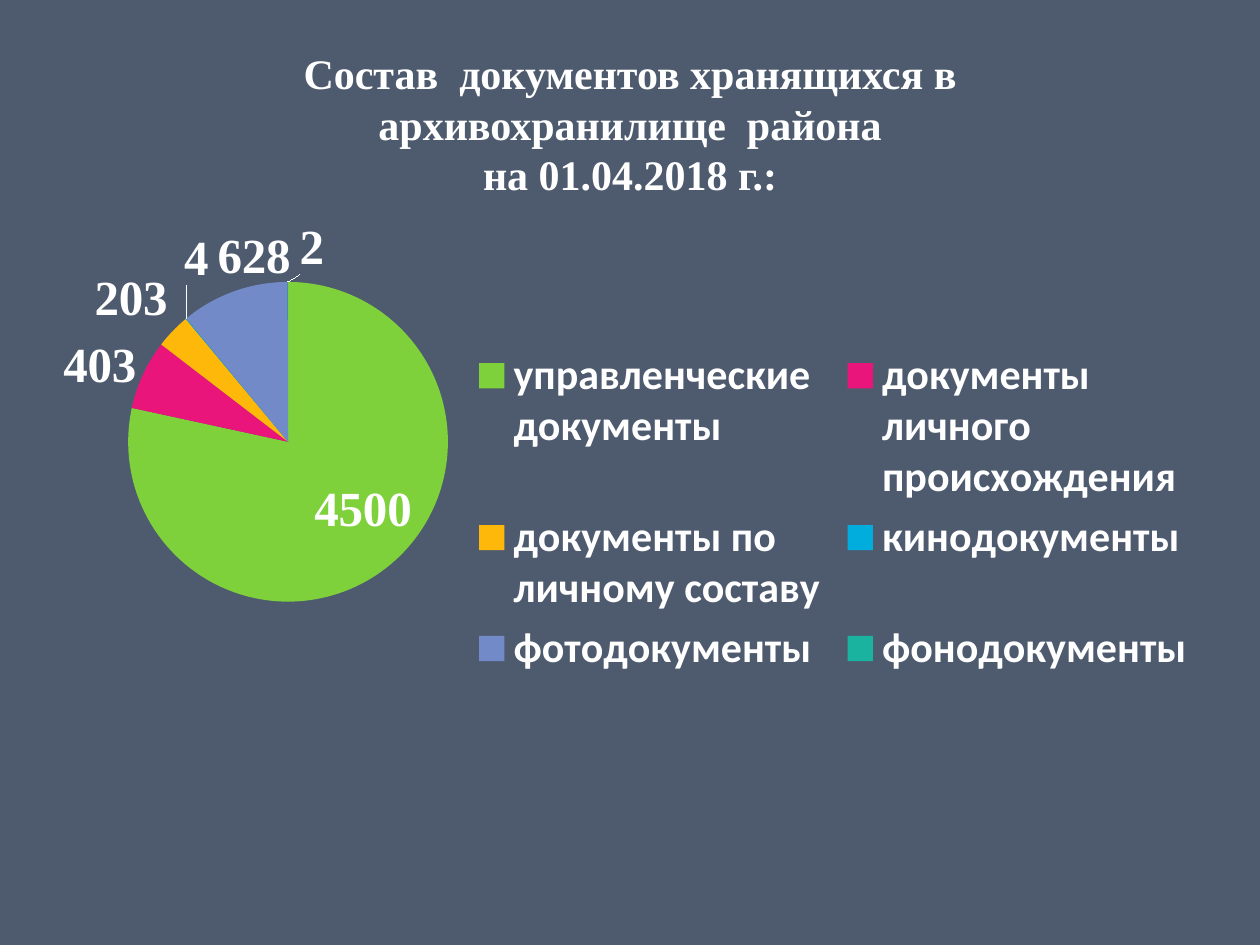
from lxml import etree
from pptx import Presentation
from pptx.chart.data import CategoryChartData
from pptx.dml.color import RGBColor
from pptx.enum.chart import XL_CHART_TYPE as ChartType, XL_LABEL_POSITION as LabelPos
from pptx.enum.chart import XL_LEGEND_POSITION as LegendPos
from pptx.enum.text import MSO_ANCHOR, PP_ALIGN
from pptx.oxml.ns import qn
from pptx.util import Inches, Pt

COLORS = {"background": "4E5B6F", "text": "FFFFFF"}
HOLDINGS = [
    ("управленческие документы", 4500, "7FD13B"),
    ("документы личного происхождения", 403, "EA157A"),
    ("документы по личному составу", 203, "FEB80A"),
    ("кинодокументы", 4, "00ADDC"),
    ("фотодокументы", 628, "738AC8"),
    ("фонодокументы", 2, "1AB39F"),
]
# Shares of the chart's width and height
PIE_AREA = {"x": 0.076, "y": 0.156, "w": 0.273, "h": 0.478}


def set_font(font, size, name="Times New Roman", color=COLORS["text"], bold=True):
    font.size, font.name, font.bold = Pt(size), name, bold
    font.color.rgb = RGBColor.from_string(color)


prs = Presentation()
prs.slide_width, prs.slide_height = Inches(10), Inches(7.5)
slide = prs.slides.add_slide(prs.slide_layouts[6])
slide.background.fill.solid()
slide.background.fill.fore_color.rgb = RGBColor.from_string(COLORS["background"])

# Title
title = slide.shapes.add_textbox(Inches(0.94), 0, Inches(8.12), Inches(1.65)).text_frame
title.word_wrap = True
title.vertical_anchor = MSO_ANCHOR.BOTTOM
title.margin_bottom = Inches(0.07)
title.text = "Состав  документов хранящихся в архивохранилище  района\nна 01.04.2018 г.:"
for line in title.paragraphs:
    line.alignment = PP_ALIGN.CENTER
    set_font(line.runs[0].font, 24)

# Pie of holdings
data = CategoryChartData()
data.categories = [name for name, _, _ in HOLDINGS]
data.add_series("Series 1", [count for _, count, _ in HOLDINGS])
chart = slide.shapes.add_chart(
    ChartType.PIE, Inches(0.31), Inches(1.41), Inches(9.3), Inches(5.31), data
).chart
set_font(chart.font, 10, name="Calibri", bold=False)
chart.has_title = False
plot = chart.plots[0]
plot.vary_by_categories = True
holdings = plot.series[0]
for index, (_, _, color) in enumerate(HOLDINGS):
    fill = holdings.points[index].format.fill
    fill.solid()
    fill.fore_color.rgb = RGBColor.from_string(color)

labels = holdings.data_labels
labels.show_value = True
labels.position = LabelPos.BEST_FIT
set_font(labels.font, 28)
leader_lines = labels._element.find(qn("c:showLeaderLines"))
if leader_lines is None:
    leader_lines = etree.SubElement(labels._element, qn("c:showLeaderLines"))
leader_lines.set("val", "1")

# Legend
chart.has_legend = True
chart.legend.position = LegendPos.RIGHT
chart.legend.include_in_layout = False
set_font(chart.legend.font, 24, name="Calibri")

# Place of the pie in the chart
plot_area = chart._chartSpace.chart.plotArea
for old in plot_area.findall(qn("c:layout")):
    plot_area.remove(old)
layout = etree.Element(qn("c:layout"))
manual = etree.SubElement(layout, qn("c:manualLayout"))
settings = {"layoutTarget": "inner", "xMode": "edge", "yMode": "edge", **PIE_AREA}
for tag, value in settings.items():
    etree.SubElement(manual, qn(f"c:{tag}"), val=str(value))
plot_area.insert(0, layout)

prs.save("out.pptx")
